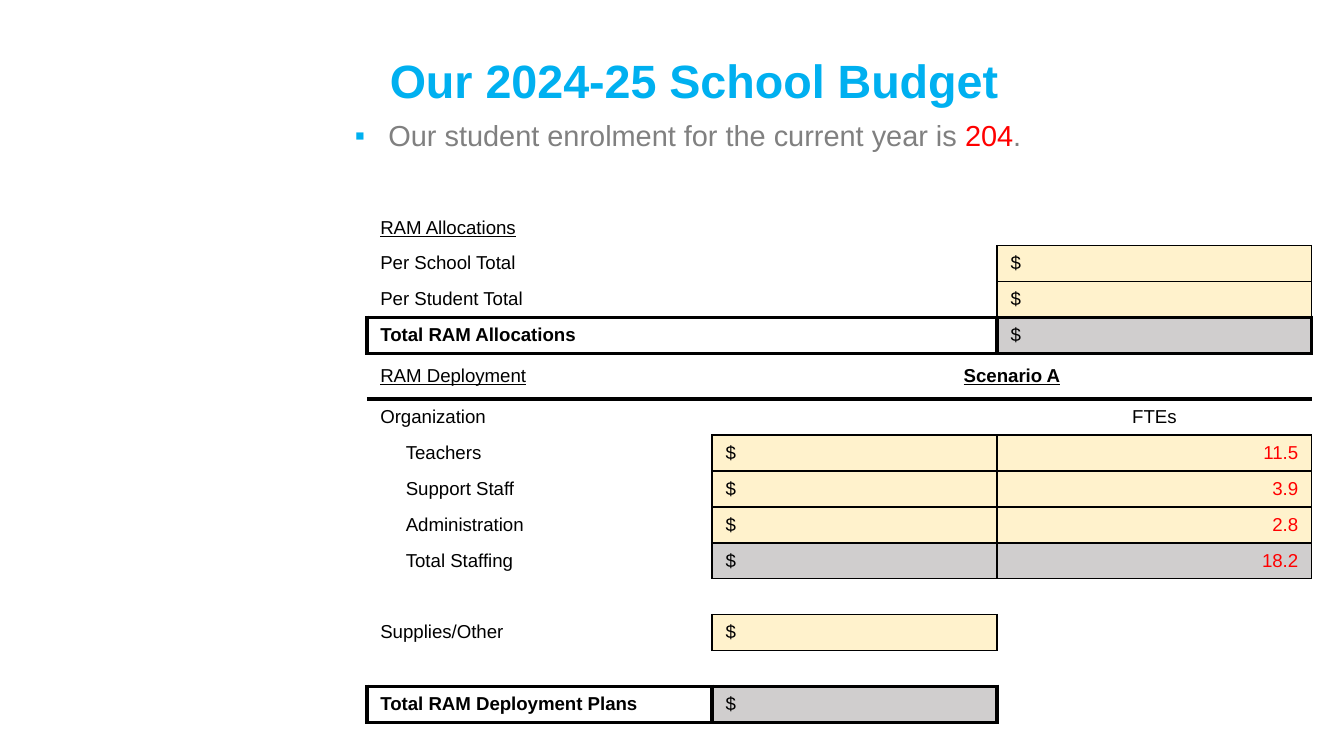
from lxml.etree import SubElement
from pptx import Presentation
from pptx.dml.color import RGBColor
from pptx.enum.text import MSO_ANCHOR, PP_ALIGN
from pptx.oxml.ns import qn
from pptx.util import Inches, Pt

BLUE, RED, GREY, BLACK = "00B0F0", "FF0000", "808080", "000000"
CREAM, SILVER = "FFF2CC", "D0CECE"
THIN, THICK = 1, 2.25
LEFT, MID, RIGHT = PP_ALIGN.LEFT, PP_ALIGN.CENTER, PP_ALIGN.RIGHT


def color(code):
    return RGBColor.from_string(code)


def write(para, text, size=10, ink=BLACK, bold=False, under=False, align=LEFT):
    para.alignment = align
    run = para.add_run()
    run.text = text
    font = run.font
    font.name, font.size = "Arial", Pt(size)
    font.bold, font.underline = bold, under
    font.color.rgb = color(ink)


def frame(edges, row, first, last, width):
    for col in range(first, last + 1):
        edges[row, col, "T"] = edges[row - 1, col, "B"] = width
        edges[row, col, "B"] = edges[row + 1, col, "T"] = width
    edges[row, first, "L"] = edges[row, first - 1, "R"] = width
    edges[row, last, "R"] = edges[row, last + 1, "L"] = width


class Page:
    def __init__(self, deck):
        self.slide = deck.slides.add_slide(deck.slide_layouts[5])

    def title(self, text, left, top, width, height):
        shape = self.slide.shapes.title
        shape.left, shape.top = Inches(left), Inches(top)
        shape.width, shape.height = Inches(width), Inches(height)
        body = shape.text_frame
        body.vertical_anchor = MSO_ANCHOR.TOP
        para = body.paragraphs[0]
        para.line_spacing = 0.9
        write(para, text, size=25, ink=BLUE, bold=True)

    def bullet(self, parts, left, top, width, height):
        box = self.slide.shapes.add_textbox(
            Inches(left), Inches(top), Inches(width), Inches(height))
        body = box.text_frame
        body.word_wrap = True
        body.margin_left = body.margin_right = Inches(0.07)
        body.margin_top, body.margin_bottom = Inches(0.44), Inches(0.04)
        para = body.paragraphs[0]
        para.line_spacing = 0.9
        props = para._p.get_or_add_pPr()
        props.set("marL", str(Inches(0.25)))
        props.set("indent", str(Inches(-0.25)))
        tint = SubElement(props, qn("a:buClr"))
        SubElement(tint, qn("a:srgbClr"), val=BLUE)
        SubElement(props, qn("a:buFont"), typeface="Arial")
        SubElement(props, qn("a:buChar"), char="▪")
        for text, ink in parts:
            write(para, text, size=15.5, ink=ink)

    def table(self, rows, spans, edges, widths, heights, left, top):
        grid = self.slide.shapes.add_table(
            len(rows), len(widths), Inches(left), Inches(top),
            Inches(sum(widths)), Inches(sum(heights))).table
        grid.first_row = grid.horz_banding = False
        style = grid._tbl.tblPr.find(qn("a:tableStyleId"))
        style.text = "{2D5ABB26-0587-4C30-8999-92F81FD0307C}"
        for col, width in zip(grid.columns, widths):
            col.width = Inches(width)
        for line, height in zip(grid.rows, heights):
            line.height = Inches(height)
        for r, row in enumerate(rows):
            for c, item in enumerate(row):
                sides = {side: edges.get((r, c, side)) for side in "LRTB"}
                self.cell(grid.cell(r, c), sides, **item)
        for r, first, last in spans:
            grid.cell(r, first).merge(grid.cell(r, last))

    def cell(self, cell, sides, text="", fill=None, inset=0.1, **style):
        cell.vertical_anchor = MSO_ANCHOR.MIDDLE
        cell.margin_left = Inches(inset)
        props = cell._tc.get_or_add_tcPr()
        for side, width in sides.items():
            line = SubElement(props, qn("a:ln" + side), w=str(Pt(width or 0)))
            if width:
                paint = SubElement(line, qn("a:solidFill"))
                SubElement(paint, qn("a:srgbClr"), val=BLACK)
            else:
                SubElement(line, qn("a:noFill"))
        if fill:
            cell.fill.solid()
            cell.fill.fore_color.rgb = color(fill)
        else:
            cell.fill.background()
        para = cell.text_frame.paragraphs[0]
        if text:
            write(para, text, **style)
        else:
            SubElement(para._p, qn("a:endParaRPr"), sz="1000")


def cash(fill=CREAM):
    return dict(text="$", fill=fill)


def staff(name, count, fill=CREAM):
    return [dict(text=name, inset=0.29), cash(fill),
            dict(text=count, fill=fill, ink=RED, align=RIGHT)]


def main():
    deck = Presentation()
    deck.slide_width = Inches(10)
    deck.slide_height = deck.slide_width * 9 // 16
    page = Page(deck)
    page.bullet([("Our student enrolment for the current year is ", GREY),
                 ("204", RED), (".", GREY)], 2.57, 0.59, 7.18, 4.19)

    rows = [
        [dict(text="RAM Allocations", under=True), {}, {}],
        [dict(text="Per School Total"), {}, cash()],
        [dict(text="Per Student Total"), {}, cash()],
        [dict(text="Total RAM Allocations", bold=True), {}, cash(SILVER)],
        [dict(text="RAM Deployment", under=True),
         dict(text="Scenario A", bold=True, under=True, align=MID), {}],
        [dict(text="Organization"), {}, dict(text="FTEs", align=MID)],
        staff("Teachers", "11.5"),
        staff("Support Staff", "3.9"),
        staff("Administration", "2.8"),
        staff("Total Staffing", "18.2", SILVER),
        [{}, {}, {}],
        [dict(text="Supplies/Other"), cash(), {}],
        [{}, {}, {}],
        [dict(text="Total RAM Deployment Plans", bold=True), cash(SILVER), {}],
    ]
    edges = {}
    for r, row in enumerate(rows):
        for c, item in enumerate(row):
            if "fill" in item:
                frame(edges, r, c, c, THIN)
    for r, first, last in [(3, 0, 1), (3, 2, 2), (13, 0, 0), (13, 1, 1)]:
        frame(edges, r, first, last, THICK)
    for c in range(3):
        edges[4, c, "B"] = edges[5, c, "T"] = THICK

    heights = [(3.81 - 0.34) / 13] * len(rows)
    heights[4] = 0.34
    page.table(rows, [(0, 0, 2), (4, 1, 2)], edges,
               [2.57, 2.12, 2.34], heights, 2.73, 1.56)
    page.title("Our 2024-25 School Budget", 2.8, 0.38, 7.2, 0.78)
    deck.save("out.pptx")


if __name__ == "__main__":
    main()
